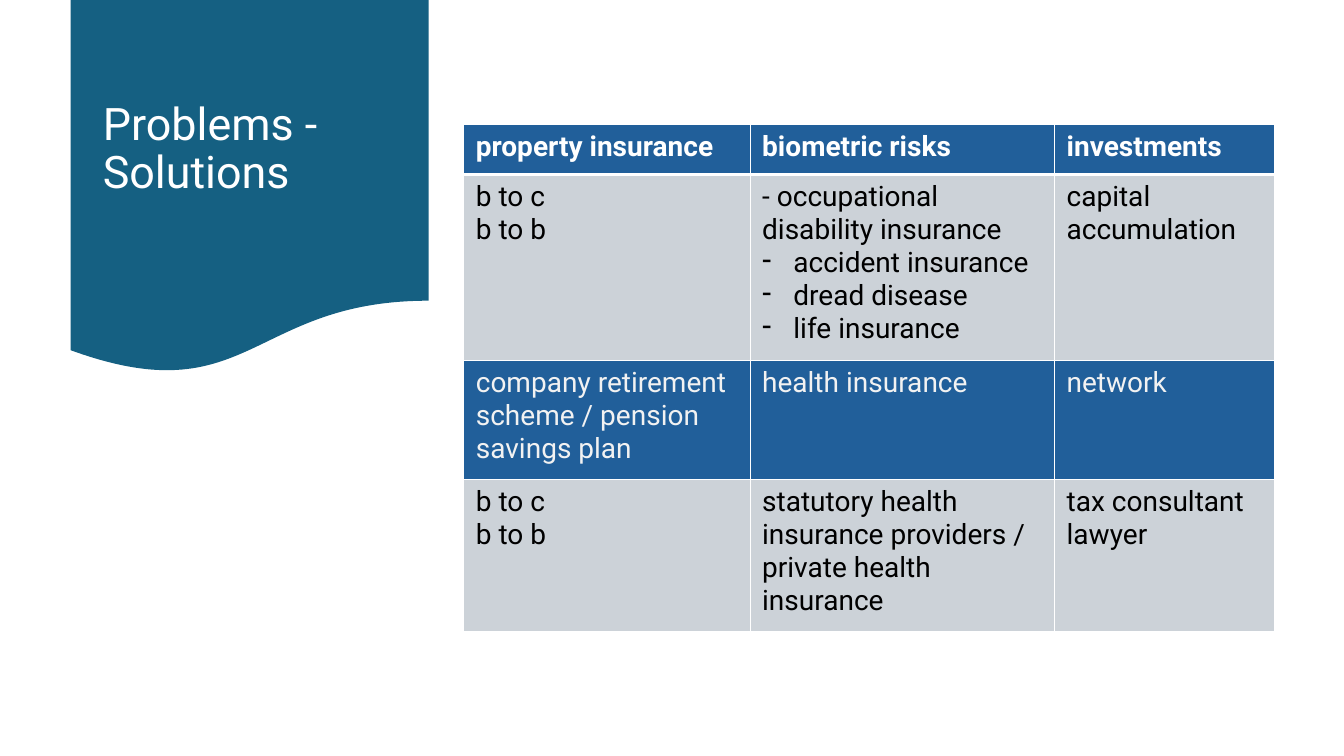
from pptx import Presentation
from pptx.dml.color import RGBColor as RGB
from pptx.enum.shapes import MSO_SHAPE as SHAPE
from pptx.enum.text import MSO_ANCHOR as ANCHOR, MSO_AUTO_SIZE as AUTO, PP_ALIGN as ALIGN
from pptx.oxml import parse_xml
from pptx.oxml.ns import nsdecls
from pptx.util import Inches, Pt

COLORS = {"banner": "156082", "dark": "215F9A", "light": "CCD2D8",
          "white": "FFFFFF", "soft": "F2F2F2", "black": "000000"}
COLUMNS = [2.84, 3.02, 2.18]
ROWS = [
    (0.5, "dark", "white", ["property insurance", "biometric risks", "investments"]),
    (1.85, "light", "black", [
        "b to c\nb to b",
        "- occupational disability insurance\n• accident insurance\n• dread disease\n• life insurance",
        "capital accumulation"]),
    (1.18, "dark", "soft", [
        "company retirement scheme / pension savings plan", "health insurance", "network"]),
    (1.51, "light", "black", [
        "b to c\nb to b",
        "statutory health insurance providers / private health insurance",
        "tax consultant\nlawyer"]),
]


class SlideBuilder:
    """Holds the style and the current slide."""

    def __init__(self, prs, font="Roboto"):
        self.font = font
        self.slide = prs.slides.add_slide(prs.slide_layouts[5])

    def style(self, p, size, color, bold=False):
        for r in p.runs:
            r.font.name, r.font.size, r.font.bold = self.font, Pt(size), bold
            r.font.color.rgb = RGB.from_string(COLORS[color])

    def banner(self, x, y, w, h):
        s = self.slide.shapes.add_shape(
            SHAPE.FLOWCHART_DOCUMENT, Inches(x), Inches(y), Inches(w), Inches(h))
        s.shadow.inherit = False
        s.fill.solid()
        s.fill.fore_color.rgb = RGB.from_string(COLORS["banner"])
        s.line.fill.background()

    def title(self, text, x, y, w, h):
        s = self.slide.shapes.title
        self.slide.shapes._spTree.append(s._element)
        s.left, s.top, s.width, s.height = (Inches(v) for v in (x, y, w, h))
        tf = s.text_frame
        tf.text = text
        tf.word_wrap, tf.auto_size = True, AUTO.NONE
        tf.vertical_anchor = ANCHOR.MIDDLE
        p = tf.paragraphs[0]
        p.alignment, p.line_spacing = ALIGN.LEFT, 0.9
        self.style(p, 32, "white")

    def bullet(self, p):
        p.text = p.text.removeprefix("• ")
        pPr = p._p.get_or_add_pPr()
        pPr.set("marL", str(Inches(0.31)))
        pPr.set("indent", str(Inches(-0.31)))
        pPr.append(parse_xml(f'<a:buChar {nsdecls("a")} char="-"/>'))

    def borders(self, cell, top, bottom):
        tcPr = cell._tc.get_or_add_tcPr()
        for i, (side, width) in enumerate(zip("LRTB", (1, 1, top, bottom))):
            tcPr.insert(i, parse_xml(
                f'<a:ln{side} {nsdecls("a")} w="{Pt(width)}"><a:solidFill>'
                f'<a:srgbClr val="{COLORS["white"]}"/></a:solidFill></a:ln{side}>'))

    def cell(self, cell, text, fill, color, header):
        cell.fill.solid()
        cell.fill.fore_color.rgb = RGB.from_string(COLORS[fill])
        cell.margin_left = cell.margin_right = Inches(0.12)
        cell.margin_top = cell.margin_bottom = Inches(0.06)
        cell.text_frame.text = text
        for p in cell.text_frame.paragraphs:
            if p.text.startswith("•"):
                self.bullet(p)
            self.style(p, 20, color, header)

    def table(self, x, y, columns, rows):
        height = sum(row[0] for row in rows)
        table = self.slide.shapes.add_table(
            len(rows), len(columns), Inches(x), Inches(y),
            Inches(sum(columns)), Inches(height)).table
        table.horz_banding = False
        for column, width in zip(table.columns, columns):
            column.width = Inches(width)
        for i, (row_height, fill, color, texts) in enumerate(rows):
            table.rows[i].height = Inches(row_height)
            for j, text in enumerate(texts):
                cell = table.cell(i, j)
                self.cell(cell, text, fill, color, i == 0)
                self.borders(cell, 3 if i == 1 else 1, 3 if i == 0 else 1)


def main():
    prs = Presentation()
    prs.slide_width, prs.slide_height = Inches(13.33), Inches(7.5)
    builder = SlideBuilder(prs)
    builder.banner(0.7, 0, 3.55, 3.72)
    builder.title("Problems - Solutions", 0.92, 0.19, 3.11, 2.59)
    builder.table(4.6, 1.23, COLUMNS, ROWS)
    prs.save("out.pptx")


if __name__ == "__main__":
    main()
